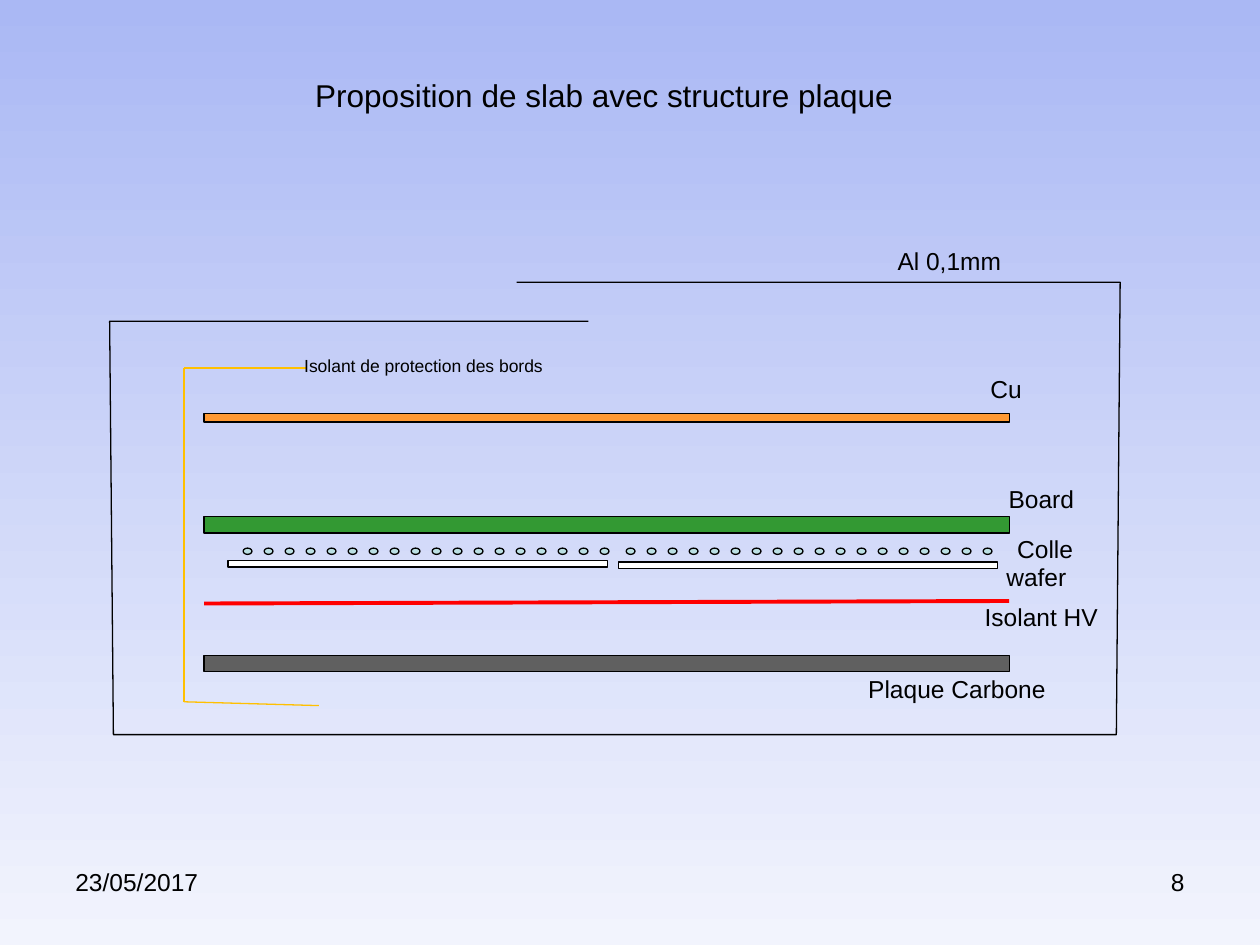
import pptx
import pptx.util
import pptx.dml.color
import pptx.enum.shapes
import pptx.enum.text
from lxml import etree

COLUMNS, ROWS = 100, 75
SHAPES = pptx.enum.shapes.MSO_SHAPE
ALIGN = pptx.enum.text.PP_ALIGN


def rgb(color):
    return pptx.dml.color.RGBColor.from_string(color)


class SlabSlide:
    font = "Arial"
    ink = "000000"
    thin = 0.75

    def __init__(self, deck):
        self.cell_width = deck.slide_width / COLUMNS
        self.cell_height = deck.slide_height / ROWS
        self.slide = deck.slides.add_slide(deck.slide_layouts[5])
        self.shapes = self.slide.shapes

    def x(self, columns):
        return round(columns * self.cell_width)

    def y(self, rows):
        return round(rows * self.cell_height)

    def box(self, column, row, width, height):
        return self.x(column), self.y(row), self.x(width), self.y(height)

    def background(self, top, bottom):
        fill = self.slide.background.fill
        fill.gradient()
        fill.gradient_angle = 270
        for stop, color in zip(fill.gradient_stops, (top, bottom)):
            stop.color.rgb = rgb(color)

    def outline(self, shape, color, weight):
        shape.line.color.rgb = rgb(color)
        shape.line.width = pptx.util.Pt(weight)

    def set_text(self, shape, text, size, align, wrap=True):
        frame = shape.text_frame
        frame.word_wrap = wrap
        frame.auto_size = pptx.enum.text.MSO_AUTO_SIZE.NONE
        frame.vertical_anchor = pptx.enum.text.MSO_ANCHOR.TOP
        paragraph = frame.paragraphs[0]
        paragraph.alignment = align
        run = paragraph.add_run()
        run.text = text
        run.font.name = self.font
        run.font.size = pptx.util.Pt(size)
        run.font.color.rgb = rgb(self.ink)

    def title(self, text, *area):
        title = self.shapes.title
        title.left, title.top, title.width, title.height = self.box(*area)
        self.set_text(title, text, 18, ALIGN.CENTER)

    def label(self, text, *area, size=14, align=ALIGN.CENTER, wrap=True):
        box = self.shapes.add_textbox(*self.box(*area))
        self.set_text(box, text, size, align, wrap)

    def solid(self, kind, fill, *area):
        shape = self.shapes.add_shape(kind, *self.box(*area))
        shape.shadow.inherit = False
        shape.fill.solid()
        shape.fill.fore_color.rgb = rgb(fill)
        self.outline(shape, self.ink, self.thin)

    def line(self, start, end, color, weight):
        line = self.shapes.add_connector(
            pptx.enum.shapes.MSO_CONNECTOR.STRAIGHT,
            self.x(start[0]), self.y(start[1]), self.x(end[0]), self.y(end[1]))
        self.outline(line, color, weight)
        properties = line.element.spPr
        etree.SubElement(properties, pptx.oxml.ns.qn("a:effectLst"))

    def open_path(self, points):
        corners = [(self.x(column), self.y(row)) for column, row in points]
        builder = self.shapes.build_freeform(*corners[0])
        builder.add_line_segments(corners[1:], close=False)
        shape = builder.convert_to_shape()
        shape.shadow.inherit = False
        shape.fill.background()
        self.outline(shape, self.ink, self.thin)


def main():
    deck = pptx.Presentation()
    deck.slide_width = pptx.util.Inches(10)
    deck.slide_height = pptx.util.Inches(7.5)
    slab = SlabSlide(deck)
    slab.background("AAB8F4", "F2F4FD")
    slab.title("Proposition de slab avec structure plaque", 21.7, 5.5, 52.5, 4)

    # Footer
    slab.label("23/05/2017", 5, 68.3, 23.3, 5.2, align=ALIGN.LEFT)
    slab.label("8", 71.7, 68.3, 23.3, 5.2, align=ALIGN.RIGHT)

    # Full-width plates: carbon, board, copper
    plate_left, plate_width = 16.2, 63.9
    for color, row, height in (("606060", 52, 1.3), ("339933", 41, 1.3),
                               ("FF9933", 32.8, 0.7)):
        slab.solid(SHAPES.RECTANGLE, color, plate_left, row, plate_width, height)

    # Two wafers
    for column, row in ((18.1, 44.5), (49.1, 44.6)):
        slab.solid(SHAPES.RECTANGLE, "FFFFFF", column, row, 30.1, 0.5)

    # Aluminium envelope and high-voltage film
    slab.open_path([(46.7, 25.5), (8.7, 25.5), (9, 58.3),
                    (88.6, 58.3), (88.9, 22.4), (41, 22.4)])
    slab.line((plate_left, 47.9), (plate_left + plate_width, 47.7), "FF0000", 2.25)

    # Glue dots, one row above each wafer
    dots_per_wafer, dot_pitch = 18, 5 / 3
    for first_dot in (19.3, 49.7):
        for dot in range(dots_per_wafer):
            slab.solid(SHAPES.OVAL, "BBE0E3",
                       first_dot + dot * dot_pitch, 43.5, 0.7, 0.5)

    # Layer names
    for name, column, row in (("Plaque Carbone", 65.4, 53),
                              ("Isolant HV", 72.1, 47.3),
                              ("wafer", 71.7, 44.1),
                              ("Colle", 72.4, 41.9),
                              ("Board", 72.1, 37.9),
                              ("Cu", 69.3, 29.2),
                              ("Al 0,1mm", 64.8, 19)):
        slab.label(name, column, row, 21.1, 3.4)

    # Edge protection film
    edge = [(24.3, 29.2), (14.6, 29.2), (14.6, 55.7), (25.3, 56)]
    for start, end in zip(edge, edge[1:]):
        slab.line(start, end, "FFC000", slab.thin)
    slab.label("Isolant de protection des bords", 22.9, 27.7, 21.4, 2.7,
               size=10, wrap=False)

    deck.save("out.pptx")


if __name__ == "__main__":
    main()
